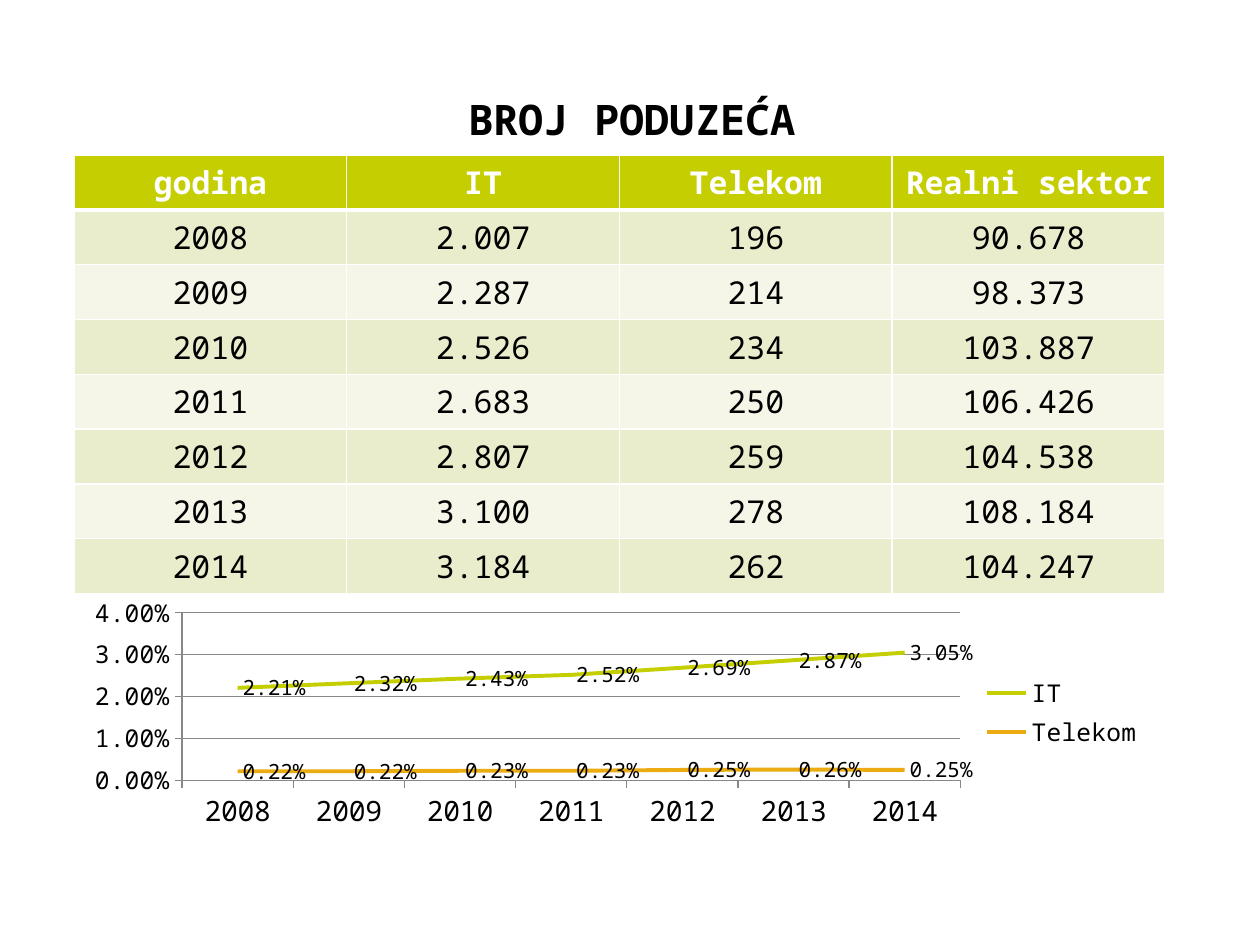
from lxml.etree import SubElement
from pptx import Presentation
from pptx.chart.data import CategoryChartData
from pptx.dml.color import RGBColor
from pptx.enum.chart import XL_CHART_TYPE as ChartType
from pptx.enum.chart import XL_LABEL_POSITION as LabelPosition
from pptx.enum.chart import XL_LEGEND_POSITION as LegendPosition
from pptx.enum.chart import XL_TICK_MARK as TickMark
from pptx.enum.text import MSO_ANCHOR as Anchor
from pptx.enum.text import PP_ALIGN as Align
from pptx.oxml.ns import qn
from pptx.util import Emu, Pt

FONT = "Noto Sans Mono"
BLACK = RGBColor(0x00, 0x00, 0x00)
WHITE = RGBColor(0xFF, 0xFF, 0xFF)
LIME = RGBColor(0xC4, 0xCE, 0x00)
AMBER = RGBColor(0xEA, 0xAC, 0x10)
BAND_DARK = RGBColor(0xEA, 0xED, 0xCC)
BAND_LIGHT = RGBColor(0xF5, 0xF6, 0xE7)
GRID_GRAY = RGBColor(0x87, 0x87, 0x87)

YEARS = [str(year) for year in range(2008, 2015)]
COMPANIES = {
    "IT": ["2.007", "2.287", "2.526", "2.683", "2.807", "3.100", "3.184"],
    "Telekom": ["196", "214", "234", "250", "259", "278", "262"],
    "Realni sektor": ["90.678", "98.373", "103.887", "106.426", "104.538",
                      "108.184", "104.247"],
}
SHARES = {
    "IT": (LIME, [0.0221, 0.0232, 0.0243, 0.0252, 0.0269, 0.0287, 0.0305]),
    "Telekom": (AMBER, [0.0022, 0.0022, 0.0023, 0.0023, 0.0025, 0.0026, 0.0025]),
}


def px(length):
    """Turn pixels into EMU."""
    return Emu(round(length * 914400 / 126))


def apply_format(target, **values):
    """Set each given attribute on the target."""
    for name, value in values.items():
        setattr(target, name, value)


def format_font(font, size, color=BLACK, bold=False):
    """Set the slide font with a size, colour and weight."""
    apply_format(font, name=FONT, size=Pt(size), bold=bold)
    font.color.rgb = color


def border_cell(cell, bottom_width):
    """Draw white borders around a cell."""
    properties = cell._tc.get_or_add_tcPr()
    widths = {"a:lnL": 1, "a:lnR": 1, "a:lnT": 1, "a:lnB": bottom_width}
    for index, (tag, width) in enumerate(widths.items()):
        line = SubElement(properties, qn(tag), w=str(Pt(width)))
        fill = SubElement(line, qn("a:solidFill"))
        SubElement(fill, qn("a:srgbClr"), val=str(WHITE))
        properties.insert(index, line)


def add_title(slide, left, top, width, height):
    """Fill the title placeholder."""
    title = slide.shapes.title
    apply_format(title, left=px(left), top=px(top), width=px(width), height=px(height))
    frame = title.text_frame
    frame.text = "BROJ PODUZEĆA"
    apply_format(frame, margin_left=0, margin_right=0, margin_top=px(6),
                 margin_bottom=px(6), vertical_anchor=Anchor.BOTTOM, word_wrap=True)
    paragraph = frame.paragraphs[0]
    paragraph.alignment = Align.CENTER
    format_font(paragraph.font, 24, bold=True)


def add_company_table(slide, left, top, width, height):
    """Add the table of company counts by year."""
    rows = [["godina", *COMPANIES], *zip(YEARS, *COMPANIES.values())]
    table = slide.shapes.add_table(len(rows), len(rows[0]), px(left), px(top),
                                   px(width), px(height)).table
    for row_index, row in enumerate(rows):
        header = row_index == 0
        band = BAND_DARK if row_index % 2 else BAND_LIGHT
        for column_index, text in enumerate(row):
            cell = table.cell(row_index, column_index)
            cell.text = text
            apply_format(cell, margin_left=px(6), margin_right=px(6),
                         margin_top=px(6), margin_bottom=px(6))
            cell.fill.solid()
            cell.fill.fore_color.rgb = LIME if header else band
            border_cell(cell, 3 if header else 1)
            paragraph = cell.text_frame.paragraphs[0]
            paragraph.alignment = Align.CENTER
            format_font(paragraph.font, 18, WHITE if header else BLACK, header)


def place_plot(chart, **fractions):
    """Fix the inner plot area at fractions of the chart box."""
    plot_area = chart._chartSpace.chart.plotArea
    layout = plot_area.find(qn("c:layout"))
    if layout is None:
        layout = SubElement(plot_area, qn("c:layout"))
        plot_area.insert(0, layout)
    manual = SubElement(layout, qn("c:manualLayout"))
    settings = {"layoutTarget": "inner", "xMode": "edge", "yMode": "edge", **fractions}
    for name, value in settings.items():
        SubElement(manual, qn(f"c:{name}"), val=str(value))


def add_share_chart(slide, left, top, width, height):
    """Add the line chart of sector shares."""
    data = CategoryChartData(number_format="0.00%")
    data.categories = YEARS
    for name, (_, values) in SHARES.items():
        data.add_series(name, values)
    chart = slide.shapes.add_chart(ChartType.LINE, px(left), px(top), px(width),
                                   px(height), data).chart
    apply_format(chart, has_title=False, has_legend=True)
    format_font(chart.font, 18)
    apply_format(chart.legend, position=LegendPosition.RIGHT, include_in_layout=False)
    format_font(chart.legend.font, 14)
    for axis, size in ((chart.category_axis, 16), (chart.value_axis, 14)):
        apply_format(axis, major_tick_mark=TickMark.OUTSIDE,
                     minor_tick_mark=TickMark.NONE)
        format_font(axis.tick_labels.font, size)
        axis.format.line.color.rgb = GRID_GRAY
    value_axis = chart.value_axis
    apply_format(value_axis, minimum_scale=0, maximum_scale=0.04, major_unit=0.01,
                 has_major_gridlines=True)
    value_axis.major_gridlines.format.line.color.rgb = GRID_GRAY
    apply_format(value_axis.tick_labels, number_format="0.00%",
                 number_format_is_linked=False)
    for series, (color, _) in zip(chart.plots[0].series, SHARES.values()):
        series.smooth = False
        series.format.line.color.rgb = color
        series.format.line.width = Pt(2.25)
        labels = series.data_labels
        apply_format(labels, show_value=True, position=LabelPosition.RIGHT,
                     number_format="0.00%", number_format_is_linked=False)
        format_font(labels.font, 12)
    place_plot(chart, x=0.1, y=0.09, w=0.72, h=0.69)


def main():
    """Build and save the slide."""
    presentation = Presentation()
    apply_format(presentation, slide_width=px(1260), slide_height=px(945))
    slide = presentation.slides.add_slide(presentation.slide_layouts[5])
    add_title(slide, 74, 78, 1116, 72)
    add_company_table(slide, 74, 155, 1091, 403)
    add_share_chart(slide, 74, 591, 1081, 243)
    presentation.save("out.pptx")


if __name__ == "__main__":
    main()
